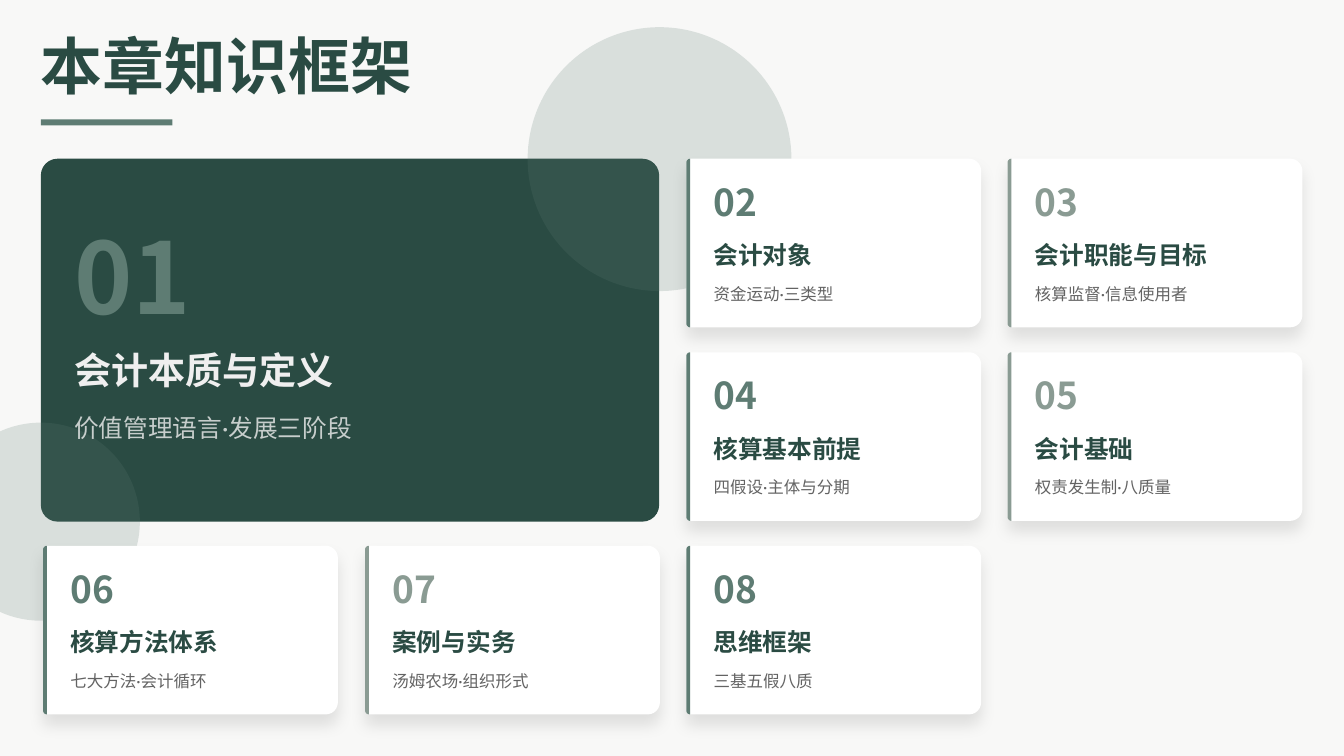
import math
from dataclasses import dataclass

from lxml import etree
from pptx import Presentation
from pptx.dml.color import RGBColor
from pptx.enum.shapes import MSO_SHAPE
from pptx.enum.text import MSO_ANCHOR, MSO_AUTO_SIZE, PP_ALIGN
from pptx.oxml.ns import qn
from pptx.util import Pt

PX = 9144
RECTANGLE = MSO_SHAPE.RECTANGLE
ROUNDED = MSO_SHAPE.ROUNDED_RECTANGLE
OVAL = MSO_SHAPE.OVAL
MIDDLE = MSO_ANCHOR.MIDDLE
NO_AUTOFIT = MSO_AUTO_SIZE.NONE
LEFT = PP_ALIGN.LEFT
TITLE_ONLY = 5


@dataclass(frozen=True)
class TextStyle:
    size: float
    spacing: float
    font: str = "Noto Sans CJK SC"
    bold: bool = True


@dataclass(frozen=True)
class Theme:
    background: str = "F8F8F7"
    dark: str = "2A4B43"
    accent: str = "5E7C73"
    muted: str = "8A9B93"
    white: str = "FFFFFF"
    light: str = "EFEFEF"
    ink: str = "212121"
    shadow: str = "000000"
    east_asian: str = "Noto Sans CJK SC"
    title: TextStyle = TextStyle(58.9, 0.8)
    hero_number: TextStyle = TextStyle(94.2, 0.8)
    large: TextStyle = TextStyle(35.3, 0.9)
    heading: TextStyle = TextStyle(23.5, 1.1)
    hero_detail: TextStyle = TextStyle(23.5, 1.1, "Lato", False)
    detail: TextStyle = TextStyle(15.7, 1.3, "Lato", False)


THEME = Theme()

CARDS = [
    (2, 0, "02", "会计对象", "资金运动·三类型"),
    (3, 0, "03", "会计职能与目标", "核算监督·信息使用者"),
    (2, 1, "04", "核算基本前提", "四假设·主体与分期"),
    (3, 1, "05", "会计基础", "权责发生制·八质量"),
    (0, 2, "06", "核算方法体系", "七大方法·会计循环"),
    (1, 2, "07", "案例与实务", "汤姆农场·组织形式"),
    (2, 2, "08", "思维框架", "三基五假八质"),
]


def to_emu(box):
    return [value * PX for value in box]


def set_alpha(fill_parent, percent):
    color = fill_parent.find(qn("a:solidFill")).find(qn("a:srgbClr"))
    etree.SubElement(color, qn("a:alpha"), val=str(percent * 1000))


def paint(shape, color, alpha=100):
    shape.shadow.inherit = False
    shape.fill.solid()
    shape.fill.fore_color.rgb = RGBColor.from_string(color)
    shape.line.fill.background()
    if alpha < 100:
        set_alpha(shape.element.spPr, alpha)
    return shape


def add_block(slide, kind, box, color, alpha=100):
    return paint(slide.shapes.add_shape(kind, *to_emu(box)), color, alpha)


def add_panel(slide, box, left_radius, right_radius, color):
    left, top, width, height = box
    right, bottom = left + width, top + height
    corners = [
        (left + left_radius, top + left_radius, left_radius, 180),
        (right - right_radius, top + right_radius, right_radius, 270),
        (right - right_radius, bottom - right_radius, right_radius, 0),
        (left + left_radius, bottom - left_radius, left_radius, 90),
    ]
    points = []
    for center_x, center_y, radius, start in corners:
        for degrees in range(start, start + 91, 10 if radius else 91):
            angle = math.radians(degrees)
            points.append(((center_x + radius * math.cos(angle)) * PX,
                           (center_y + radius * math.sin(angle)) * PX))
    builder = slide.shapes.build_freeform(*points[0])
    builder.add_line_segments(points[1:], close=True)
    return paint(builder.convert_to_shape(), color)


def add_soft_shadow(shape):
    effects = shape.element.spPr.find(qn("a:effectLst"))
    shadow = etree.SubElement(
        effects, qn("a:outerShdw"), blurRad=str(Pt(14.7)), dist=str(Pt(9.8)),
        dir="5400000", algn="ctr", rotWithShape="0")
    color = etree.SubElement(shadow, qn("a:srgbClr"), val=THEME.shadow)
    etree.SubElement(color, qn("a:alpha"), val="10000")


def write(shape, text, style, color, alpha=100):
    frame = shape.text_frame
    frame.word_wrap = True
    frame.auto_size = NO_AUTOFIT
    frame.vertical_anchor = MIDDLE
    frame.margin_left = frame.margin_right = 0
    frame.margin_top = frame.margin_bottom = 0
    paragraph = frame.paragraphs[0]
    paragraph.alignment = LEFT
    paragraph.line_spacing = style.spacing
    run = paragraph.add_run()
    run.text = text
    run.font.name = style.font
    run.font.size = Pt(style.size)
    run.font.bold = style.bold
    run.font.color.rgb = RGBColor.from_string(color)
    properties = run.font._element
    properties.find(qn("a:latin")).addnext(
        properties.makeelement(qn("a:ea"), {"typeface": THEME.east_asian}))
    if alpha < 100:
        set_alpha(properties, alpha)


def add_text(slide, box, text, style, color, alpha=100):
    write(slide.shapes.add_textbox(*to_emu(box)), text, style, color, alpha)


def add_header(slide, box):
    left, top, width, height = box
    title = slide.shapes.title
    title.left, title.top, title.width, title.height = to_emu(box)
    write(title, "本章知识框架", THEME.title, THEME.dark)
    add_block(slide, RECTANGLE, (left, top + 104, 174, 8), THEME.accent)


def add_hero(slide, box):
    left, top, width, height = box
    panel = add_block(slide, ROUNDED, box, THEME.dark)
    panel.adjustments[0] = 22 / height
    for center_x, center_y, diameter in [
        (left + width, top, 349),
        (left, top + height, 262),
    ]:
        circle = (center_x - diameter // 2, center_y - diameter // 2, diameter, diameter)
        add_block(slide, OVAL, circle, THEME.accent, 20)
    text_left = left + 44
    add_text(slide, (text_left, top + 103, 796, 131), "01", THEME.hero_number, THEME.accent)
    add_text(slide, (text_left, top + 256, 755, 54), "会计本质与定义", THEME.large, THEME.light)
    add_text(slide, (text_left, top + 332, 747, 44), "价值管理语言·发展三阶段",
             THEME.hero_detail, THEME.light, 80)


def add_card(slide, box, number, heading, detail):
    left, top, width, height = box
    accent = THEME.muted if int(number) % 2 else THEME.accent
    add_soft_shadow(add_panel(slide, box, 5, 16, THEME.white))
    add_panel(slide, (left, top, 5, height), 5, 0, accent)
    text_left = left + 36
    add_text(slide, (text_left, top + 33, 346, 54), number, THEME.large, accent)
    add_text(slide, (text_left, top + 103, 338, 44), heading, THEME.heading, THEME.dark)
    add_text(slide, (text_left, top + 158, 332, 33), detail, THEME.detail, THEME.ink, 70)


def main():
    presentation = Presentation()
    presentation.slide_width = 1778 * PX
    presentation.slide_height = 1000 * PX
    slide = presentation.slides.add_slide(presentation.slide_layouts[TITLE_ONLY])
    slide.background.fill.solid()
    slide.background.fill.fore_color.rgb = RGBColor.from_string(THEME.background)
    add_header(slide, (54, 54, 1710, 82))
    add_hero(slide, (54, 210, 818, 480))
    for column, row, number, heading, detail in CARDS:
        left = 57 + math.ceil(column * 1276 / 3)
        add_card(slide, (left, 210 + row * 256, 390, 223), number, heading, detail)
    presentation.save("out.pptx")


if __name__ == "__main__":
    main()
